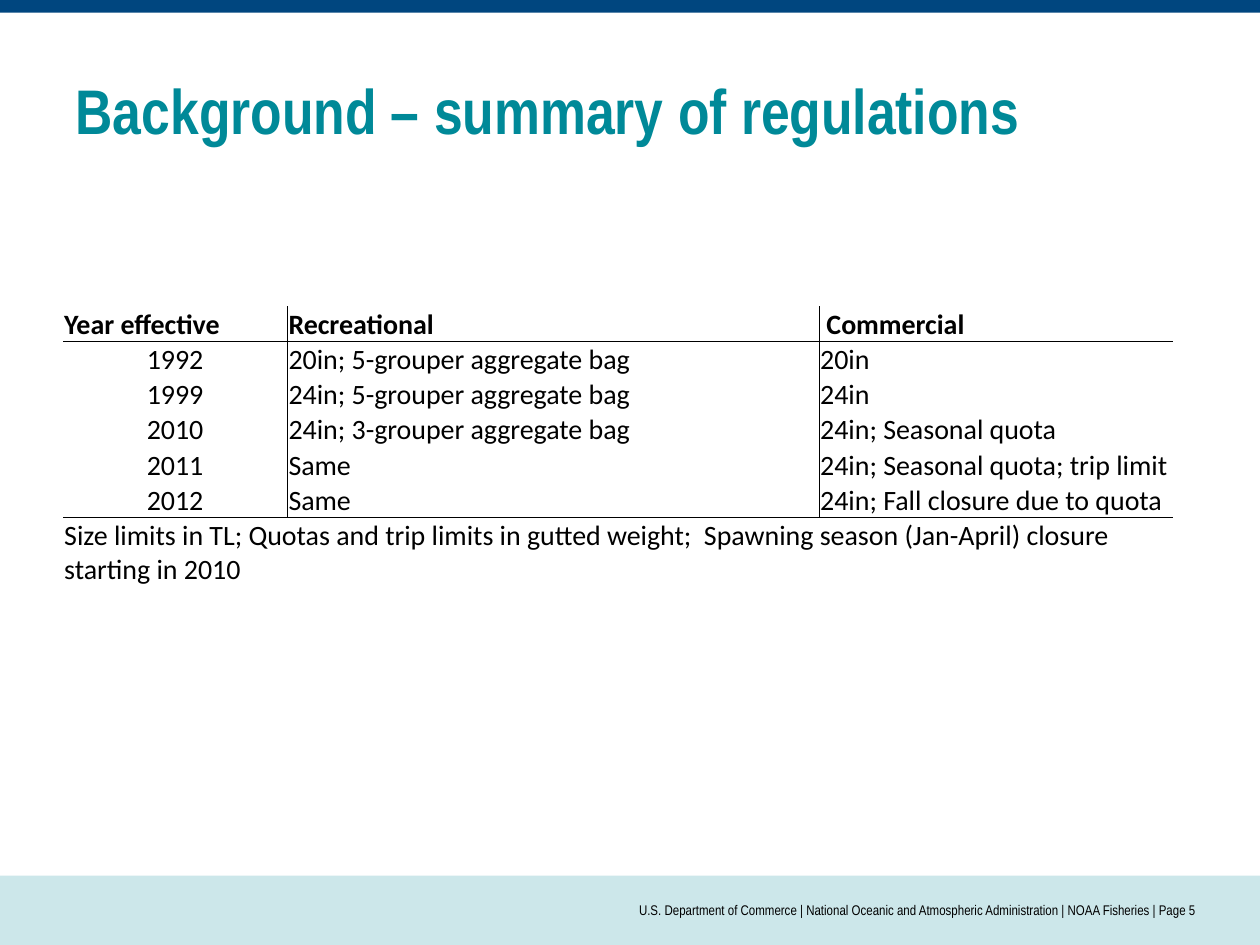
from lxml.etree import SubElement
from pptx import Presentation
from pptx.dml.color import RGBColor
from pptx.enum.shapes import MSO_SHAPE
from pptx.enum.text import MSO_ANCHOR, PP_ALIGN
from pptx.oxml.ns import qn
from pptx.util import Inches, Pt

THEME = {
    "top_band": RGBColor.from_string("00467F"),
    "bottom_band": RGBColor.from_string("CCE7EA"),
    "title": {"name": "Arial Narrow", "size": Pt(36), "bold": True, "color": "008998"},
    "footer": {"name": "Arial Narrow", "size": Pt(8), "bold": False, "color": "000000"},
    "header": {"name": "Calibri", "size": Pt(16), "bold": True, "color": "000000"},
    "body": {"name": "Calibri", "size": Pt(16), "bold": False, "color": "000000"},
    "rule_color": "000000",
    "rule_width": Pt(0.5),
}
REGULATIONS = [
    ("Year effective", "Recreational", " Commercial"),
    ("1992", "20in; 5-grouper aggregate bag", "20in"),
    ("1999", "24in; 5-grouper aggregate bag", "24in"),
    ("2010", "24in; 3-grouper aggregate bag", "24in; Seasonal quota"),
    ("2011", "Same", "24in; Seasonal quota; trip limit"),
    ("2012", "Same", "24in; Fall closure due to quota"),
    ("Size limits in TL; Quotas and trip limits in gutted weight;  "
     "Spawning season (Jan-April) closure starting in 2010", "", ""),
]
COLUMN_WIDTHS = [1.78, 4.22, 2.81]
ROW_HEIGHT = 0.28


def write(paragraph, text, style, alignment=PP_ALIGN.LEFT):
    paragraph.text = text
    paragraph.alignment = alignment
    for attribute, value in THEME[style].items():
        if attribute == "color":
            paragraph.font.color.rgb = RGBColor.from_string(value)
        else:
            setattr(paragraph.font, attribute, value)


def set_borders(cell, ruled_sides):
    """Rule the sides named by the letters L, R, T and B; clear the others."""
    properties = cell._tc.get_or_add_tcPr()
    for side in "LRTB":
        line = SubElement(properties, qn(f"a:ln{side}"), w=str(THEME["rule_width"]))
        if side in ruled_sides:
            fill = SubElement(line, qn("a:solidFill"))
            SubElement(fill, qn("a:srgbClr"), val=THEME["rule_color"])
        else:
            SubElement(line, qn("a:noFill"))


prs = Presentation()
prs.slide_width, prs.slide_height = Inches(10), Inches(7.5)
slide = prs.slides.add_slide(prs.slide_layouts[5])

# Bands across the top and bottom edges
for top, height, color in [(6.95, 0.55, "bottom_band"), (0, 0.1, "top_band")]:
    band = slide.shapes.add_shape(
        MSO_SHAPE.RECTANGLE, 0, Inches(top), prs.slide_width, Inches(height))
    band.shadow.inherit = False
    band.fill.solid()
    band.fill.fore_color.rgb = THEME[color]
    band.line.fill.background()

title = slide.shapes.title
title.left, title.top = Inches(0.5), Inches(0.5)
title.width, title.height = Inches(9), Inches(0.74)
title.text_frame.vertical_anchor = MSO_ANCHOR.MIDDLE
write(title.text_frame.paragraphs[0], "Background – summary of regulations", "title")

footer = slide.shapes.add_textbox(Inches(2.5), Inches(6.95), Inches(7), Inches(0.55)).text_frame
footer_format = {"word_wrap": True, "vertical_anchor": MSO_ANCHOR.MIDDLE,
                 "margin_left": 0, "margin_right": 0}
for attribute, value in footer_format.items():
    setattr(footer, attribute, value)
write(footer.paragraphs[0],
      "U.S. Department of Commerce | National Oceanic and Atmospheric Administration"
      " | NOAA Fisheries | Page 5", "footer", PP_ALIGN.RIGHT)

# Regulations by year, closed by a note across all columns
note_row = len(REGULATIONS) - 1
last_column = len(COLUMN_WIDTHS) - 1
table = slide.shapes.add_table(
    len(REGULATIONS), len(COLUMN_WIDTHS), Inches(0.5), Inches(2.43),
    Inches(sum(COLUMN_WIDTHS)), Inches(ROW_HEIGHT * len(REGULATIONS))).table
table.first_row = table.horz_banding = False
for column, width in zip(table.columns, COLUMN_WIDTHS):
    column.width = Inches(width)
for row in table.rows:
    row.height = Inches(ROW_HEIGHT)
table.cell(note_row, 0).merge(table.cell(note_row, last_column))

cell_format = {"vertical_anchor": MSO_ANCHOR.BOTTOM, "margin_left": Inches(0.01),
               "margin_right": Inches(0.01), "margin_top": Inches(0.01), "margin_bottom": 0}
for r, entries in enumerate(REGULATIONS):
    for c, entry in enumerate(entries):
        cell = table.cell(r, c)
        for attribute, value in cell_format.items():
            setattr(cell, attribute, value)
        sides = "T" if r in (1, note_row) else ""
        sides += "B" if r in (0, note_row - 1) else ""
        if r < note_row:
            sides += "L" if c > 0 else ""
            sides += "R" if c < last_column else ""
        set_borders(cell, sides)
        cell.fill.background()
        if entry:
            is_year = c == 0 and 0 < r < note_row
            write(cell.text_frame.paragraphs[0], entry, "body" if r else "header",
                  PP_ALIGN.CENTER if is_year else PP_ALIGN.LEFT)

prs.save("out.pptx")
